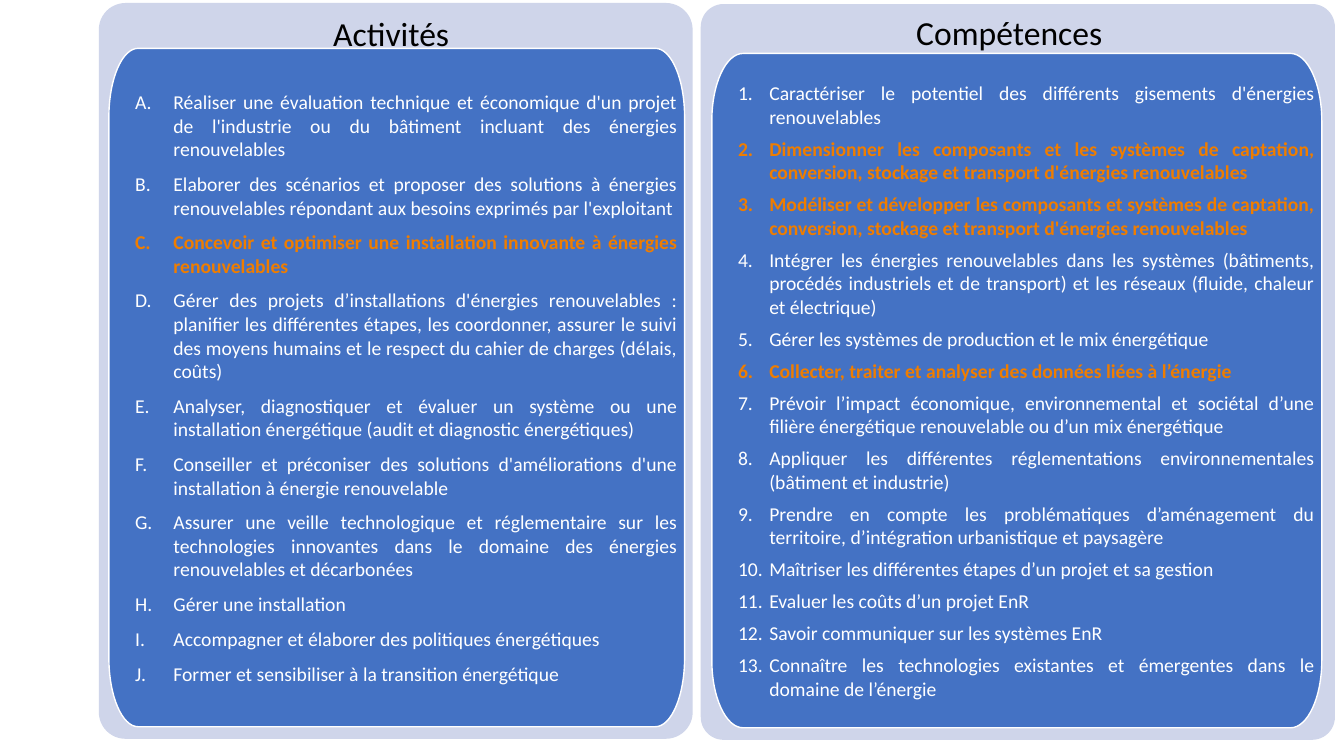
"""Build the slide that lists the activities and skills of the energy programme."""
from lxml import etree
from pptx import Presentation, oxml
from pptx.dml.color import RGBColor
from pptx.enum import shapes, text
from pptx.util import Inches, Pt

COLORS = {"back": "CFD5EA", "panel": "4472C4", "white": "FFFFFF",
          "accent": "EF7D00", "heading": "000000"}

ACTIVITIES = [
    "Réaliser une évaluation technique et économique d'un projet de l'industrie ou du bâtiment incluant des énergies renouvelables",
    "Elaborer des scénarios et proposer des solutions à énergies renouvelables répondant aux besoins exprimés par l'exploitant",
    "Concevoir et optimiser une installation innovante à énergies renouvelables",
    "Gérer des projets d’installations d'énergies renouvelables : planifier les différentes étapes, les coordonner, assurer le suivi des moyens humains et le respect du cahier de charges (délais, coûts)",
    "Analyser, diagnostiquer et évaluer un système ou une installation énergétique (audit et diagnostic énergétiques)",
    "Conseiller et préconiser des solutions d'améliorations d'une installation à énergie renouvelable",
    "Assurer une veille technologique et réglementaire sur les technologies innovantes dans le domaine des énergies renouvelables et décarbonées",
    "Gérer une installation",
    "Accompagner et élaborer des politiques énergétiques",
    "Former et sensibiliser à la transition énergétique",
]
SKILLS = [
    "Caractériser le potentiel des différents gisements d'énergies renouvelables",
    "Dimensionner les composants et les systèmes de captation, conversion, stockage et transport d'énergies renouvelables",
    "Modéliser et développer les composants et systèmes de captation, conversion, stockage et transport d'énergies renouvelables",
    "Intégrer les énergies renouvelables dans les systèmes (bâtiments, procédés industriels et de transport) et les réseaux (fluide, chaleur et électrique)",
    "Gérer les systèmes de production et le mix énergétique",
    "Collecter, traiter et analyser des données liées à l’énergie",
    "Prévoir l’impact économique, environnemental et sociétal d’une filière énergétique renouvelable ou d’un mix énergétique",
    "Appliquer les différentes réglementations environnementales (bâtiment et industrie)",
    "Prendre en compte les problématiques d’aménagement du territoire, d’intégration urbanistique et paysagère",
    "Maîtriser les différentes étapes d’un projet et sa gestion",
    "Evaluer les coûts d’un projet EnR",
    "Savoir communiquer sur les systèmes EnR",
    "Connaître les technologies existantes et émergentes dans le domaine de l’énergie",
]
COLUMNS = [
    {"heading": "Compétences", "items": SKILLS, "accents": {1, 2, 5},
     "back": (6.95, 0.04, 6.29, 7.3), "adj": 0.036, "title": (6.84, 0.04, 6.34, 0.61),
     "panel": (7.06, 0.53, 6.05, 6.69), "radii": (0.31, 0.67),
     "numbering": "arabicPeriod", "indent": (0.5, -0.31), "after": 6},
    {"heading": "Activités", "items": ACTIVITIES, "accents": {2},
     "back": (0.98, 0.03, 5.89, 7.3), "adj": 0.045, "title": (1, 0, 5.76, 0.7),
     "panel": (1.08, 0.48, 5.71, 6.73), "radii": (0.29, 0.68),
     "numbering": "alphaUcPeriod", "indent": (0.57, -0.38), "after": 8},
]
CURVE = 0.55


def add_run(p, content, size, color, bold=False):
    r = p.add_run()
    r.text = content
    for name, value in {"name": "Calibri", "size": Pt(size), "bold": bold}.items():
        setattr(r.font, name, value)
    r.font.color.rgb = RGBColor.from_string(COLORS[color])


def set_frame(tf, inset):
    for side in ("left", "top", "right", "bottom"):
        setattr(tf, f"margin_{side}", Inches(inset))
    tf.word_wrap = True
    tf.vertical_anchor = text.MSO_ANCHOR.MIDDLE


prs = Presentation()
prs.slide_width, prs.slide_height = Inches(13.33), Inches(7.5)
s = prs.slides.add_slide(prs.slide_layouts[6])

for col in COLUMNS:
    back = s.shapes.add_shape(shapes.MSO_SHAPE.ROUNDED_RECTANGLE, *map(Inches, col["back"]))
    back.adjustments[0] = col["adj"]
    back.shadow.inherit = False
    back.fill.solid()
    back.fill.fore_color.rgb = RGBColor.from_string(COLORS["back"])
    back.line.fill.background()

    title = s.shapes.add_textbox(*map(Inches, col["title"]))
    set_frame(title.text_frame, 0.38)
    p = title.text_frame.paragraphs[0]
    p.alignment = text.PP_ALIGN.CENTER
    p.line_spacing = 0.9
    add_run(p, col["heading"], 24, "heading")

    x, y, w, h = map(Inches, col["panel"])
    rx, ry = map(Inches, col["radii"])
    corners = [(0, 0), (w, 0), (w, h), (0, h)]
    outline = [(0, ry), (rx, 0), (w - rx, 0), (w, ry),
               (w, h - ry), (w - rx, h), (rx, h), (0, h - ry)]
    builder = s.shapes.build_freeform(*outline[0])
    builder.add_line_segments(outline[1:], close=True)
    panel = builder.convert_to_shape(x, y)
    segments = list(panel._element.iter(oxml.ns.qn("a:lnTo")))
    for i, corner in enumerate(corners):
        curve = segments[2 * i]
        curve.tag = oxml.ns.qn("a:cubicBezTo")
        for j, end in enumerate(outline[2 * i:2 * i + 2]):
            px, py = (round(e + CURVE * (c - e)) for e, c in zip(end, corner))
            curve.insert(j, etree.Element(oxml.ns.qn("a:pt"), x=str(px), y=str(py)))
    panel.shadow.inherit = False
    panel.fill.solid()
    panel.fill.fore_color.rgb = RGBColor.from_string(COLORS["panel"])
    panel.line.color.rgb = RGBColor.from_string(COLORS["white"])
    panel.line.width = Pt(1)

    tf = panel.text_frame
    set_frame(tf, 0.07)
    left, hanging = col["indent"]
    for i, item in enumerate(col["items"]):
        p = tf.add_paragraph() if i else tf.paragraphs[0]
        p.alignment = text.PP_ALIGN.JUSTIFY
        p.space_after = Pt(col["after"])
        pPr = p._p.get_or_add_pPr()
        pPr.set("marL", str(Inches(left)))
        pPr.set("indent", str(Inches(hanging)))
        etree.SubElement(pPr, oxml.ns.qn("a:buFont"), typeface="+mj-lt")
        etree.SubElement(pPr, oxml.ns.qn("a:buAutoNum"), type=col["numbering"])
        accent = i in col["accents"]
        add_run(p, item, 14, "accent" if accent else "white", accent)

prs.save("out.pptx")
